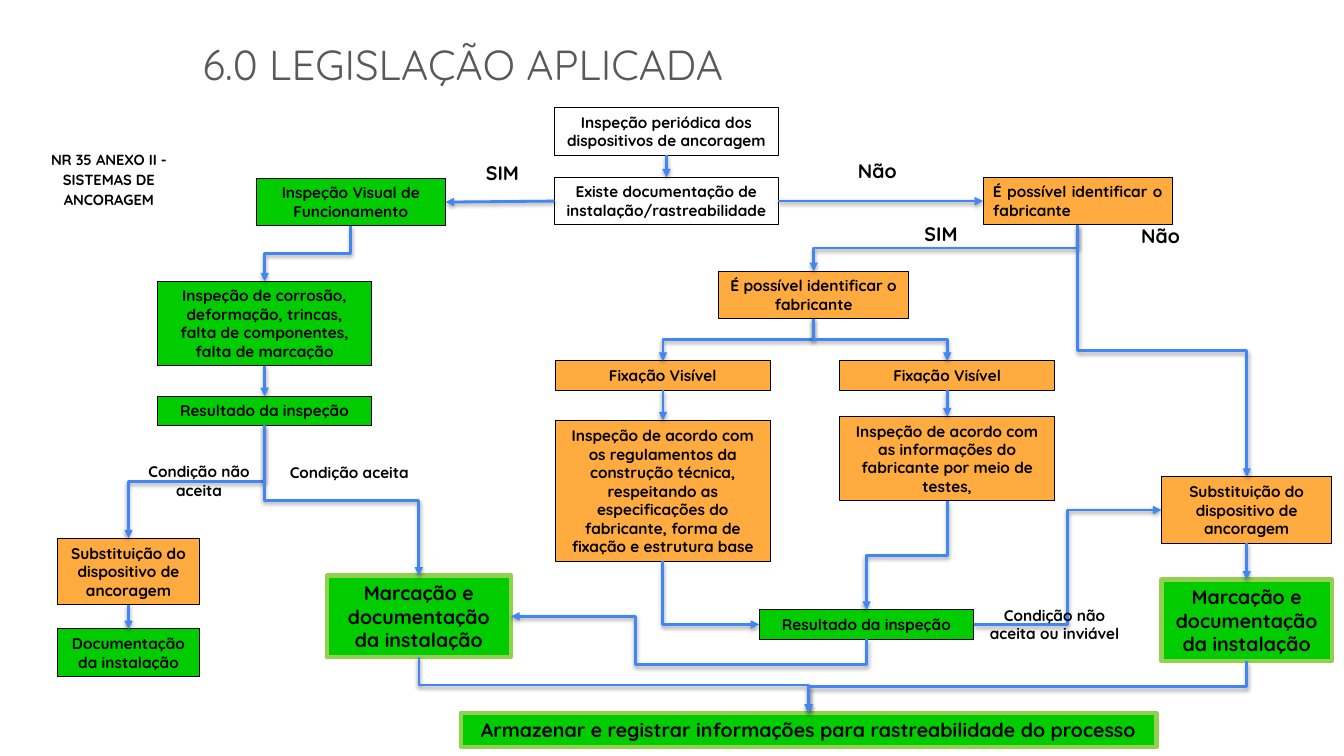
from pptx import Presentation
from pptx import util as u
from pptx.dml import color
from pptx.enum import shapes, text
from pptx.oxml import parse_xml
from pptx.oxml import ns

FONT = "Quicksand"
WHITE, BLACK, GREEN, ORANGE = "FFFFFF", "000000", "00CC00", "FFAB40"
LIME, BLUE, GREY = "92D050", "4285F4", "595959"
TOP, LEFT, BOTTOM, RIGHT = range(4)
CENTER, JUSTIFY = text.PP_ALIGN.CENTER, text.PP_ALIGN.JUSTIFY
STEP, TALL, ROW, KEY = 0.47, 0.66, 0.29, 0.81
REPLACE = "Substituição do dispositivo de ancoragem"
MARK = "Marcação e documentação da instalação"
MAKER = "É possível identificar o fabricante"
RESULT = "Resultado da inspeção"


def rgb(value):
    return color.RGBColor.from_string(value)


def element(markup):
    tag, _, rest = markup.partition(" ")
    return parse_xml(f"<a:{tag} {ns.nsdecls('a')} {rest}")


def write(frame, words, size, ink=BLACK, bold=True, align=None):
    frame.word_wrap = True
    para = frame.paragraphs[0]
    para.alignment = align
    span = para.add_run()
    span.text = words
    span.font.name, span.font.size, span.font.bold = FONT, u.Pt(size), bold
    span.font.color.rgb = rgb(ink)
    return para


def place(region, left, top, width, height):
    return [u.Inches(n) for n in (region[0] + left, region[1] + top, width, height)]


def add_box(page, region, left, top, width, height, words, fill, align=CENTER):
    box = page.shapes.add_shape(
        shapes.MSO_SHAPE.RECTANGLE, *place(region, left, top, width, height))
    box.shadow.inherit = False
    box.fill.solid()
    box.fill.fore_color.rgb = rgb(fill)
    box.line.color.rgb = rgb(BLACK)
    box.line.width = u.Pt(0.75)
    write(box.text_frame, words, 11, align=align)
    box.text_frame.vertical_anchor = text.MSO_ANCHOR.MIDDLE
    box.text_frame.auto_size = text.MSO_AUTO_SIZE.SHAPE_TO_FIT_TEXT
    return box


def add_key_box(page, region, left, top, width, height, words):
    box = add_box(page, region, left, top, width, height, words, GREEN)
    box.line.color.rgb = rgb(LIME)
    box.line.width = u.Pt(3)
    span = box.text_frame.paragraphs[0].runs[0]
    span.font.size = u.Pt(14)
    span.font._element.insert(0, element(
        f'ln w="{u.Pt(0.75)}"><a:solidFill><a:srgbClr val="{LIME}"/></a:solidFill></a:ln>'))
    return box


def add_label(page, region, left, top, words, width=0.65, size=14, align=None):
    height = 0.34 if size == 14 else STEP
    label = page.shapes.add_textbox(*place(region, left, top, width, height))
    write(label.text_frame, words, size, align=align)


def turn(arrow):
    run, rise = arrow.end_x - arrow.begin_x, arrow.end_y - arrow.begin_y
    middle_x = (arrow.begin_x + arrow.end_x) // 2
    middle_y = (arrow.begin_y + arrow.end_y) // 2
    arrow.width, arrow.height = abs(rise), abs(run)
    arrow.left, arrow.top = middle_x - abs(rise) // 2, middle_y - abs(run) // 2
    frame = arrow._element.spPr.find(ns.qn("a:xfrm"))
    frame.set("rot", "5400000" if run < 0 else "16200000")
    frame.set("flipH", "1" if (run > 0) == (rise > 0) else "0")
    frame.set("flipV", "0")


def join(page, start, start_side, end, end_side, bends=None, kind=3):
    style = shapes.MSO_CONNECTOR.STRAIGHT if bends is None else shapes.MSO_CONNECTOR.ELBOW
    arrow = page.shapes.add_connector(style, 0, 0, 0, 0)
    arrow.begin_connect(start, start_side)
    arrow.end_connect(end, end_side)
    arrow.line.color.rgb = rgb(BLUE)
    arrow.line.width = u.Pt(2)
    arrow.line._get_or_add_ln().append(element('tailEnd type="triangle"/>'))
    properties = arrow._element.spPr
    properties.append(element(
        'effectLst ><a:outerShdw blurRad="40000" dist="20000" dir="5400000" rotWithShape="0">'
        f'<a:srgbClr val="{BLACK}"><a:alpha val="38000"/></a:srgbClr>'
        '</a:outerShdw></a:effectLst>'))
    if bends is None:
        return
    if start_side == BOTTOM:
        turn(arrow)
    outline = properties.find(ns.qn("a:prstGeom"))
    outline.set("prst", f"bentConnector{kind}")
    guides = outline.find(ns.qn("a:avLst"))
    for number, bend in enumerate(bends, 1):
        name = "adj" if kind == 3 else f"adj{number}"
        guides.append(element(f'gd name="{name}" fmla="val {round(bend * 100000)}"/>'))


def heading(page, region):
    title, body = page.placeholders
    title.left, title.top, title.width, title.height = place(region, 1.69, 0, 11.42, 0.83)
    body.left, body.top, body.width, body.height = place(region, 0, 1.09, 1.78, 0.72)
    for holder in (title, body):
        frame = holder.text_frame
        frame.margin_left = frame.margin_right = u.Inches(0.13)
        frame.margin_top = frame.margin_bottom = u.Inches(0.13)
        frame.vertical_anchor = text.MSO_ANCHOR.TOP
        frame.auto_size = text.MSO_AUTO_SIZE.NONE
    write(title.text_frame, "6.0 LEGISLAÇÃO APLICADA", 30, GREY, False, text.PP_ALIGN.LEFT)
    para = write(body.text_frame, "NR 35 ANEXO II - SISTEMAS DE ANCORAGEM", 10.5, align=CENTER)
    para.line_spacing = 1.15
    para.space_before = u.Pt(0)
    settings = para._p.get_or_add_pPr()
    settings.set("marL", "0")
    settings.set("indent", "0")
    settings.append(element("buNone />"))


def opening(page, region):
    periodic = add_box(page, region, 0, 0, 2.22, STEP,
                       "Inspeção periódica dos dispositivos de ancoragem", WHITE)
    records = add_box(page, region, 0, 0.69, 2.22, STEP,
                      "Existe documentação de instalação/rastreabilidade", WHITE)
    join(page, periodic, BOTTOM, records, TOP)
    add_label(page, region, -0.78, 0.48, "SIM")
    add_label(page, region, 2.91, 0.46, "Não")
    return records


def visual_branch(page, region):
    visual = add_box(page, region, 1.97, 0, 1.88, STEP,
                     "Inspeção Visual de Funcionamento", GREEN)
    defects = add_box(
        page, region, 0.99, 1.02, 2.13, 0.84,
        "Inspeção de corrosão, deformação, trincas, falta de componentes, falta de marcação", GREEN)
    result = add_box(page, region, 0.99, 2.16, 2.13, ROW, RESULT, GREEN)
    replace = add_box(page, region, 0, 3.57, 1.41, TALL, REPLACE, ORANGE)
    papers = add_box(page, region, 0, 4.47, 1.41, STEP, "Documentação da instalação", GREEN)
    mark = add_key_box(page, region, 2.67, 3.94, 1.83, KEY, MARK)
    join(page, visual, BOTTOM, defects, TOP, [0.5])
    join(page, defects, BOTTOM, result, TOP)
    join(page, result, BOTTOM, replace, TOP, [0.5])
    join(page, result, BOTTOM, mark, TOP, [0.38])
    join(page, replace, BOTTOM, papers, TOP)
    add_label(page, region, 0.68, 2.77, "Condição não aceita", 1.45, 11, CENTER)
    add_label(page, region, 2.17, 2.78, "Condição aceita", 1.45, 11, CENTER)
    return visual, mark


def maker_branch(page, region):
    maker = add_box(page, region, 4.24, 0, 1.88, STEP, MAKER, ORANGE, JUSTIFY)
    known = add_box(page, region, 1.62, 0.93, 1.88, STEP, MAKER, ORANGE)
    result = add_box(page, region, 2.02, 4.29, 2.13, ROW, RESULT, GREEN)
    join(page, maker, BOTTOM, known, TOP, [0.5])
    checks = (
        (0, 2.41, 1.4, "Inspeção de acordo com os regulamentos da construção técnica, respeitando "
         "as especificações do fabricante, forma de fixação e estrutura base", LEFT, [], 2),
        (2.82, 2.37, 0.84, "Inspeção de acordo com as informações do fabricante por meio de "
         "testes,", TOP, [0.5], 3),
    )
    for left, top, height, words, side, bends, kind in checks:
        fixing = add_box(page, region, left, 1.82, 2.13, ROW, "Fixação Visível", ORANGE)
        check = add_box(page, region, left, top, 2.13, height, words, ORANGE)
        join(page, known, BOTTOM, fixing, TOP, [0.5])
        join(page, fixing, BOTTOM, check, TOP)
        join(page, check, BOTTOM, result, side, bends, kind)
    add_label(page, region, 3.56, 0.39, "SIM")
    add_label(page, region, 5.71, 0.41, "Não")
    return maker, result


def replacement(page, region):
    replace = add_box(page, region, 0, 0, 1.69, TALL, REPLACE, ORANGE)
    mark = add_key_box(page, region, 0, 1.02, 1.69, KEY, MARK)
    join(page, replace, BOTTOM, mark, TOP)
    return replace, mark


def closing(page, region, marks):
    store = add_key_box(page, region, 0, 0, 6.9, 0.34,
                        "Armazenar e registrar informações para rastreabilidade do processo")
    for mark, bend in zip(marks, (0.5, 0.47)):
        join(page, mark, BOTTOM, store, TOP, [bend])


def main():
    deck = Presentation()
    deck.slide_width, deck.slide_height = u.Inches(13.33), u.Inches(7.5)
    page = deck.slides.add_slide(deck.slide_layouts[1])
    heading(page, (0.19, 0.25))
    records = opening(page, (5.5, 1.07))
    visual, left_mark = visual_branch(page, (0.57, 1.77))
    maker, result = maker_branch(page, (5.51, 1.76))
    replace, right_mark = replacement(page, (11.52, 4.73))
    join(page, records, LEFT, visual, RIGHT)
    join(page, records, RIGHT, maker, LEFT)
    join(page, maker, BOTTOM, replace, TOP, [0.09])
    join(page, result, RIGHT, replace, LEFT, [0.78])
    join(page, result, BOTTOM, left_mark, RIGHT, [-1.12, 0.65], 4)
    add_label(page, (9.67, 5.96), 0, 0, "Condição não aceita ou inviável", 1.58, 11, CENTER)
    closing(page, (4.57, 7.07), (left_mark, right_mark))
    deck.save("out.pptx")


if __name__ == "__main__":
    main()
